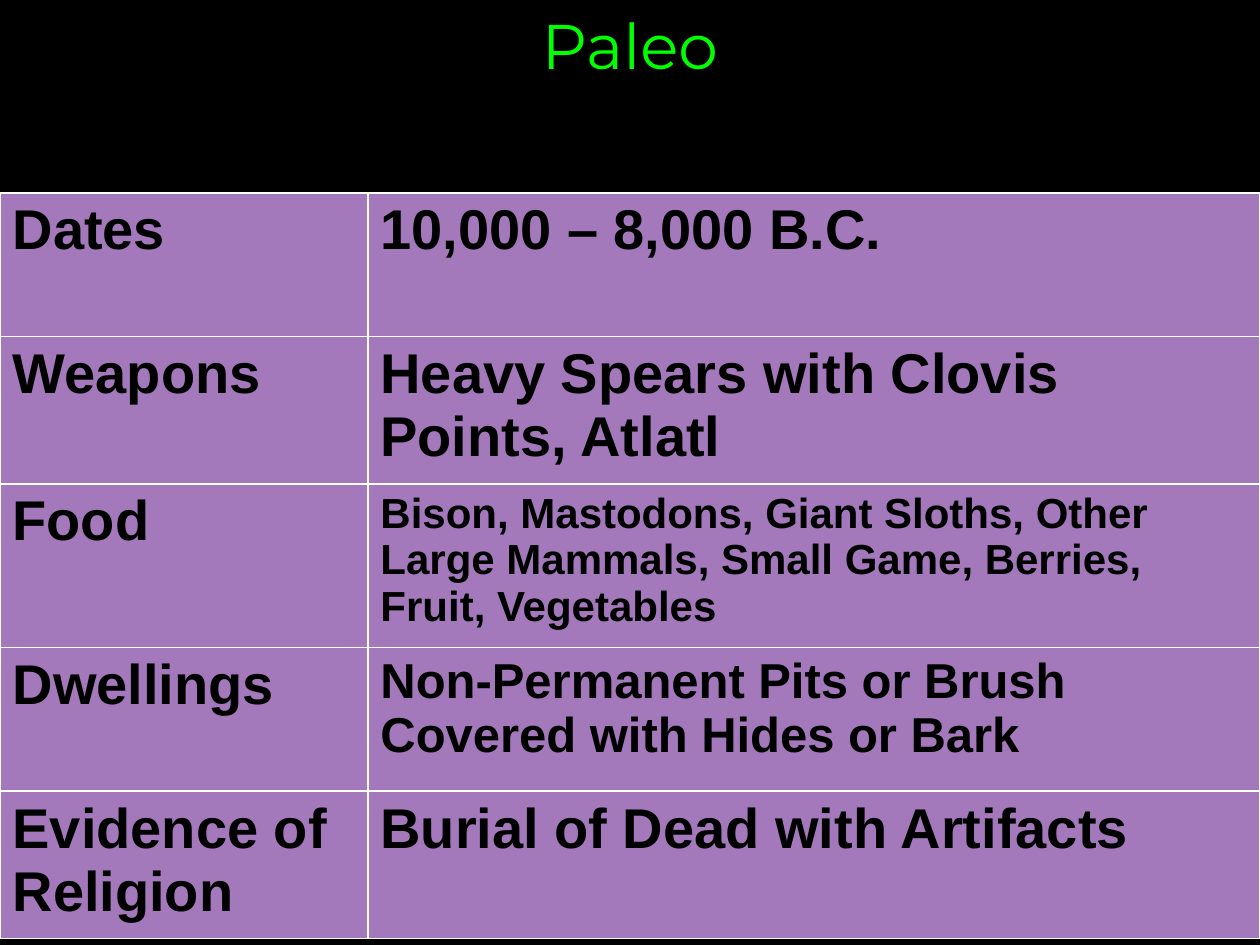
import pptx
import pptx.dml.color
import pptx.enum.text
import pptx.oxml
import pptx.oxml.ns
import pptx.util

Inches, Pt = pptx.util.Inches, pptx.util.Pt
RGB = pptx.dml.color.RGBColor.from_string

# Content: label, fact, fact type size
TITLE = "Paleo"
FACTS = [
    ("Dates", "10,000 – 8,000 B.C.", "large"),
    ("Weapons", "Heavy Spears with Clovis Points, Atlatl", "large"),
    ("Food", "Bison, Mastodons, Giant Sloths, Other Large Mammals, "
             "Small Game, Berries, Fruit, Vegetables", "small"),
    ("Dwellings", "Non-Permanent Pits or Brush Covered with Hides or Bark", "medium"),
    ("Evidence of Religion", "Burial of Dead with Artifacts", "large"),
]

THEME = {
    "background": "000000", "title": "00FF00", "outline": "000000",
    "cell": "A379BB", "text": "000000", "border": "FFFFFF",
    "title_font": "Montserrat", "body_font": "Arial",
    "title_size": 36, "large": 32, "medium": 28, "small": 24,
}

# Layout in inches
WIDTH, HEIGHT = 10, 7.5
TITLE_HEIGHT = 1.46
TABLE_TOP = 1.53
COLUMNS = [2.92, 7.08]
ROWS = [1.14, 1.17, 1.3, 1.14, 1.17]


def line_xml(tag, color, width):
    return pptx.oxml.parse_xml(
        f'<a:{tag} {pptx.oxml.ns.nsdecls("a")} w="{Pt(width)}"><a:solidFill>'
        f'<a:srgbClr val="{color}"/></a:solidFill></a:{tag}>')


def style(paragraph, font, size, color, bold=False):
    paragraph.font.name = font
    paragraph.font.size = Pt(size)
    paragraph.font.bold = bold
    paragraph.font.color.rgb = RGB(color)


def fill_cell(cell, text, size):
    properties = cell._tc.get_or_add_tcPr()
    for side in "LRTB":
        properties.append(line_xml("ln" + side, THEME["border"], 1))
    cell.fill.solid()
    cell.fill.fore_color.rgb = RGB(THEME["cell"])
    cell.text = text
    style(cell.text_frame.paragraphs[0], THEME["body_font"], THEME[size],
          THEME["text"], bold=True)


def add_title(page):
    box = page.shapes.add_textbox(0, 0, Inches(WIDTH), Inches(TITLE_HEIGHT))
    box.text_frame.word_wrap = False
    para = box.text_frame.paragraphs[0]
    para.alignment = pptx.enum.text.PP_ALIGN.CENTER
    span = para.add_run()
    span.text = TITLE
    style(para, THEME["title_font"], THEME["title_size"], THEME["title"])
    # Thin outline around the letters
    span._r.get_or_add_rPr().insert(0, line_xml("ln", THEME["outline"], 0.75))


def add_facts(page):
    table = page.shapes.add_table(
        len(ROWS), len(COLUMNS), 0, Inches(TABLE_TOP),
        Inches(sum(COLUMNS)), Inches(sum(ROWS))).table
    table.first_row = table.horz_banding = False
    for column, width in zip(table.columns, COLUMNS):
        column.width = Inches(width)
    for row, height, (label, fact, size) in zip(table.rows, ROWS, FACTS):
        row.height = Inches(height)
        fill_cell(row.cells[0], label, "large")
        fill_cell(row.cells[1], fact, size)


def main():
    deck = pptx.Presentation()
    deck.slide_width, deck.slide_height = Inches(WIDTH), Inches(HEIGHT)
    page = deck.slides.add_slide(deck.slide_layouts[6])
    page.background.fill.solid()
    page.background.fill.fore_color.rgb = RGB(THEME["background"])
    add_title(page)
    add_facts(page)
    deck.save("out.pptx")


if __name__ == "__main__":
    main()
